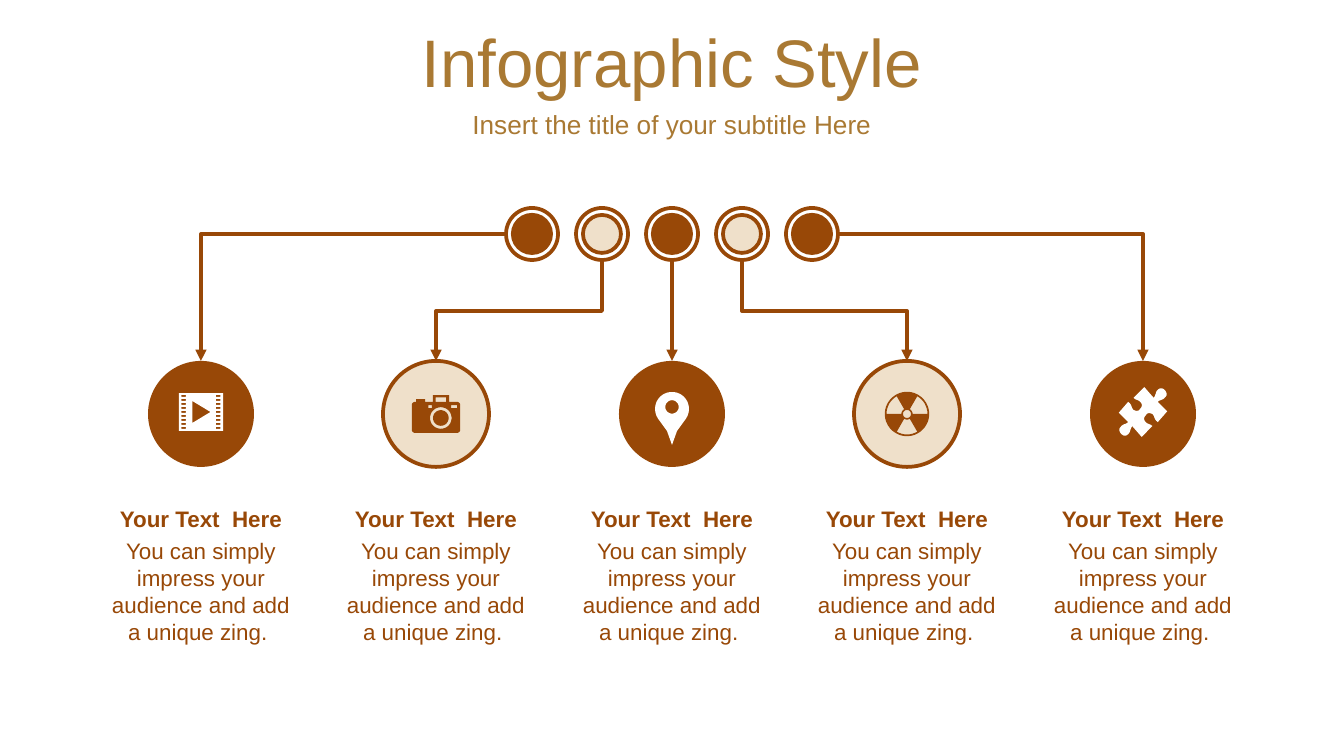
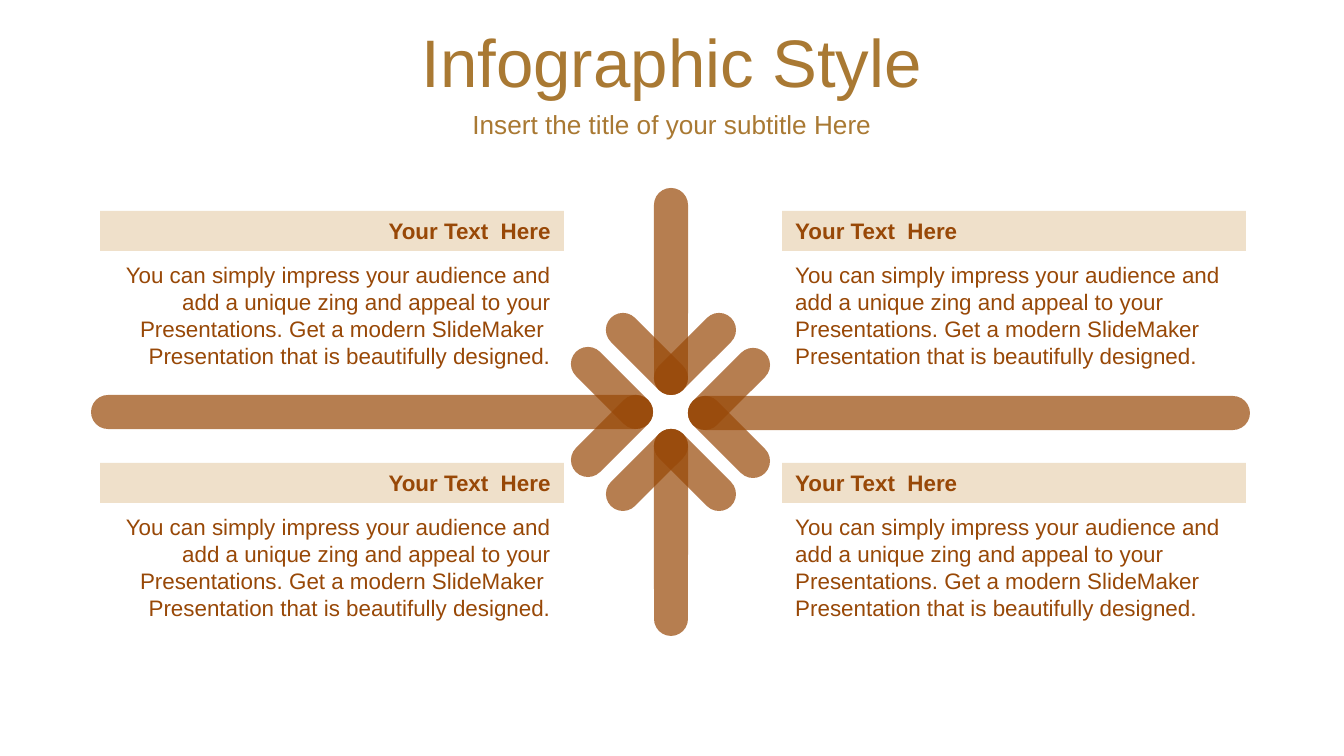
import math

import pptx
import pptx.dml.color
import pptx.enum.shapes
import pptx.enum.text
import pptx.oxml.ns
import pptx.util
from lxml import etree

SCALE = 914400 / 134.4
PAGE_WIDTH, PAGE_HEIGHT = 1344, 756
FONT = "Arial"
GOLD = pptx.dml.color.RGBColor(0xA9, 0x79, 0x33)
BROWN = pptx.dml.color.RGBColor(0x98, 0x48, 0x07)
CREAM = pptx.dml.color.RGBColor(0xEF, 0xE0, 0xCA)
WHITE = pptx.dml.color.RGBColor(0xFF, 0xFF, 0xFF)
ALIGN = pptx.enum.text.PP_ALIGN
ANCHOR = pptx.enum.text.MSO_ANCHOR
SHAPE = pptx.enum.shapes.MSO_SHAPE
CONNECTOR = pptx.enum.shapes.MSO_CONNECTOR

HEADING = "Your Text  Here"
SHORT_TEXT = "You can simply impress your audience and add a unique zing. "
LONG_TEXT = (
    "You can simply impress your audience and add a unique zing and appeal to your "
    "Presentations. Get a modern SlideMaker  Presentation that is beautifully designed."
)
BAR = 34


def px(length):
    """Turn px into EMU."""
    return pptx.util.Emu(round(length * SCALE))


def add_child(parent, tag, **attributes):
    """Append a drawing element to an XML parent."""
    return etree.SubElement(parent, pptx.oxml.ns.qn(tag), **attributes)


def write(shape, text, size, color, align, anchor=ANCHOR.TOP, bold=False, before=0):
    """Put one wrapped paragraph in a shape."""
    frame = shape.text_frame
    frame.word_wrap = True
    frame.vertical_anchor = anchor
    para = frame.paragraphs[0]
    para.text = text
    para.alignment = align
    para.space_before = pptx.util.Pt(before)
    para.font.name = FONT
    para.font.size = pptx.util.Pt(size)
    para.font.bold = bold
    para.font.color.rgb = color


def add_text(page, left, top, width, height, *content, **style):
    """Add a text box with one paragraph."""
    box = page.shapes.add_textbox(px(left), px(top), px(width), px(height))
    write(box, *content, **style)


def paint(shape, fill=None, line=None):
    """Set the fill and outline of a shape and drop its shadow."""
    shape.shadow.inherit = False
    if fill is None:
        shape.fill.background()
    else:
        shape.fill.solid()
        shape.fill.fore_color.rgb = fill
    if line is None:
        shape.line.fill.background()
    else:
        shape.line.color.rgb = line
        shape.line.width = pptx.util.Pt(2)


def add_shape(page, kind, left, top, width, height, fill=None, line=None):
    """Add a painted preset shape."""
    shape = page.shapes.add_shape(kind, px(left), px(top), px(width), px(height))
    paint(shape, fill, line)
    return shape


def add_disc(page, center_x, center_y, size, fill=None, line=None):
    """Add a circle around a centre."""
    add_shape(page, SHAPE.OVAL, center_x - size // 2, center_y - size // 2,
              size, size, fill, line)


def add_titles(page):
    """Write the title and subtitle across the page."""
    for text, top, height, size in (
        ("Infographic Style", 19, 84, 36),
        ("Insert the title of your subtitle Here", 103, 42, 14),
    ):
        add_text(page, 0, top, PAGE_WIDTH, height, text, size, GOLD, ALIGN.CENTER,
                 anchor=ANCHOR.MIDDLE, before=size * 0.2)


def rectangle(left, top, right, bottom):
    """Return the corners of a rectangle."""
    return [(left, top), (right, top), (right, bottom), (left, bottom)]


def arc(center_x, center_y, radius, start=0, end=360):
    """Return points on an arc, with angles in degrees clockwise."""
    steps = max(8, abs(end - start) // 10)
    angles = [math.radians(start + (end - start) * i / steps) for i in range(steps + 1)]
    return [(center_x + radius * math.cos(a), center_y + radius * math.sin(a)) for a in angles]


def curve(first, second, third, fourth):
    """Return points on a cubic curve, without its start."""
    points = []
    for step in range(1, 7):
        t = step / 6
        weights = ((1 - t) ** 3, 3 * t * (1 - t) ** 2, 3 * t * t * (1 - t), t ** 3)
        points.append(tuple(
            sum(w * p[axis] for w, p in zip(weights, (first, second, third, fourth)))
            for axis in (0, 1)))
    return points


def film_icon():
    """Return a film frame with perforations and a play mark."""
    holes = [rectangle(left, 40 * row - 10, left + 45, 40 * row + 10)
             for row in range(-4, 5) for left in (-195, 150)]
    return [rectangle(-222, -188, 222, 188), [(-87, -110), (95, 0), (-87, 110)], *holes]


def camera_icon():
    """Return a camera body with its windows and lens."""
    body = (arc(-212, -90, 30, 180, 270) + rectangle(-200, -120, -110, -148)[:1]
            + [(-200, -148), (-110, -148), (-110, -120), (-30, -120), (-30, -188),
               (130, -188), (130, -120)]
            + arc(212, -90, 30, 270, 360) + arc(212, 158, 30, 0, 90)
            + arc(-212, 158, 30, 90, 180))
    return [body, rectangle(-5, -165, 102, -120), rectangle(-75, -88, -40, -60),
            rectangle(150, -88, 212, -60), arc(48, 40, 108), arc(48, 40, 78)]


def pin_icon():
    """Return a map pin with a round hole."""
    return [arc(0, -50, 170, 145, 395) + [(50, 170), (0, 310), (-50, 170)], arc(0, -70, 67)]


def radiation_icon():
    """Return a disc with three sectors and a hub cut out."""
    sectors = [arc(0, 0, 205, start, start + 60) + arc(0, 0, 56, start + 60, start)
               for start in (60, 180, 300)]
    return [arc(0, 0, 222), arc(0, 0, 40), *sectors]


def puzzle_icon():
    """Return a jigsaw piece made of one half and its half turn."""
    half = [(215, -222)]
    for segment in (
        ((242, -195), (242, -168), (228, -155)),
        ((202, -114), (175, -128), (148, -101)),
        ((242, -7),),
        ((148, 101),),
        ((108, 74), (121, 47), (94, 20)),
        ((67, 7), (40, 7), (27, 34)),
        ((13, 47), (0, 74), (27, 101)),
        ((54, 128), (67, 114), (94, 141)),
        ((-13, 249),),
        ((-108, 141),),
        ((-134, 181), (-121, 195), (-148, 222)),
        ((-175, 249), (-202, 235), (-215, 222)),
    ):
        half += curve(half[-1], *segment) if len(segment) == 3 else segment
    return [half + [(-x, -y) for x, y in half]]


def draw_icon(page, contours, center_x, center_y, fill):
    """Draw contours, given in tenths of a px, around a centre."""
    builder = None
    for contour in contours:
        if builder is None:
            builder = page.shapes.build_freeform(*contour[0], scale=SCALE / 10)
        else:
            builder.move_to(*contour[0])
        builder.add_line_segments(contour[1:], close=True)
    paint(builder.convert_to_shape(px(center_x), px(center_y)), fill)


def add_arrow_line(page, kind, begin_x, begin_y, end_x, end_y):
    """Add a brown connector with an arrowhead and return its properties."""
    line = page.shapes.add_connector(kind, px(begin_x), px(begin_y), px(end_x), px(end_y))
    line.line.color.rgb = BROWN
    line.line.width = pptx.util.Pt(2)
    properties = line._element.spPr
    add_child(properties.find(pptx.oxml.ns.qn("a:ln")), "a:tailEnd", type="triangle")
    add_child(properties, "a:effectLst")
    return properties


def add_corner_line(page, *ends):
    """Add a line that runs across and then down."""
    properties = add_arrow_line(page, CONNECTOR.ELBOW, *ends)
    properties.find(pptx.oxml.ns.qn("a:prstGeom")).set("prst", "bentConnector2")


def add_step_line(page, begin_x, begin_y, end_x, end_y):
    """Add a line that runs down, across and down, by turning an elbow."""
    middle_x, middle_y = (begin_x + end_x) / 2, (begin_y + end_y) / 2
    side = 1 if end_x > begin_x else -1
    reach, drop = abs(end_x - begin_x) / 2, side * (end_y - begin_y) / 2
    properties = add_arrow_line(page, CONNECTOR.ELBOW, middle_x + drop, middle_y - reach,
                                middle_x - drop, middle_y + reach)
    turn = 270 if side > 0 else 90
    properties.find(pptx.oxml.ns.qn("a:xfrm")).set("rot", str(turn * 60000))


def add_ring(page, center_x, center_y, light):
    """Draw a dot inside a ring."""
    if light:
        add_disc(page, center_x, center_y, 38, CREAM, BROWN)
    else:
        add_disc(page, center_x, center_y, 42, BROWN)
    add_disc(page, center_x, center_y, 52, line=BROWN)


def add_column(page, left, top, width, light, icon, icon_shift):
    """Draw an icon disc with a heading and text below it."""
    center_x, center_y = left + width // 2, top + 53
    add_disc(page, center_x, center_y, 106, CREAM if light else BROWN, BROWN if light else None)
    draw_icon(page, icon, center_x, center_y + icon_shift, BROWN if light else WHITE)
    add_text(page, left, top + 170, width, 122, SHORT_TEXT, 12, BROWN, ALIGN.CENTER)
    add_text(page, left, top + 138, width, 40, HEADING, 12, BROWN, ALIGN.CENTER, bold=True)


def build_branches(page):
    """Build the page of five rings that lead to five columns."""
    add_titles(page)
    ring_y, column_top, width = 234, 361, 222
    icons = ((film_icon(), -2), (camera_icon(), 0), (pin_icon(), 0),
             (radiation_icon(), 0), (puzzle_icon(), -2))
    ring_xs = [532 + 70 * i for i in range(5)]
    lefts = [90 + 471 * i // 2 for i in range(5)]
    for i, (icon, shift) in enumerate(icons):
        add_ring(page, ring_xs[i], ring_y, i % 2 == 1)
        add_column(page, lefts[i], column_top, width, i % 2 == 1, icon, shift)
    targets = [left + width // 2 for left in lefts]
    for i, side in ((0, -1), (4, 1)):
        add_corner_line(page, ring_xs[i] + side * 26, ring_y, targets[i], column_top)
    for i in (1, 3):
        add_step_line(page, ring_xs[i], ring_y + 27, targets[i], column_top)
    add_arrow_line(page, CONNECTOR.STRAIGHT, ring_xs[2], ring_y + 27, targets[2], column_top)


def add_bar(page, center_x, center_y, length, turn):
    """Add a see-through round-ended bar around a centre."""
    bar = add_shape(page, SHAPE.ROUNDED_RECTANGLE, center_x - length / 2,
                    center_y - BAR / 2, length, BAR, BROWN)
    bar.adjustments[0] = 0.5
    bar.rotation = turn
    color = bar._element.spPr.find(".//" + pptx.oxml.ns.qn("a:srgbClr"))
    add_child(color, "a:alpha", val="70000")


def add_arrow(page, tip_x, tip_y, step_x, step_y, length):
    """Build an arrow of three bars that meet at a tip."""
    reach = (length - BAR) / 2
    add_bar(page, tip_x - step_x * reach, tip_y - step_y * reach, length, 90 if step_y else 0)
    for side in (-1, 1):
        shift_x = 24 * (side * step_y - step_x)
        shift_y = 24 * (side * step_x - step_y)
        add_bar(page, tip_x + shift_x, tip_y + shift_y, 102, 45 if shift_x * shift_y > 0 else 135)


def add_card(page, left, top, align):
    """Build a text block under a heading band."""
    width = 464
    add_text(page, left, top + 44, width, 122, LONG_TEXT, 12, BROWN, align)
    band = add_shape(page, SHAPE.RECTANGLE, left, top, width, 40, CREAM)
    write(band, HEADING, 12, BROWN, align, anchor=ANCHOR.MIDDLE, bold=True)


def build_arrows(page):
    """Build the page of four arrows between four cards."""
    add_titles(page)
    for arrow in ((636, 412, 1, 0, 562), (705, 413, -1, 0, 562),
                  (671, 446, 0, -1, 207), (671, 378, 0, 1, 207)):
        add_arrow(page, *arrow)
    for top in (211, 463):
        add_card(page, 100, top, ALIGN.RIGHT)
        add_card(page, 782, top, ALIGN.LEFT)


def main():
    """Build and save the deck."""
    deck = pptx.Presentation()
    deck.slide_width, deck.slide_height = px(PAGE_WIDTH), px(PAGE_HEIGHT)
    for build in (build_branches, build_arrows):
        build(deck.slides.add_slide(deck.slide_layouts[6]))
    deck.save("out.pptx")


if __name__ == "__main__":
    main()
